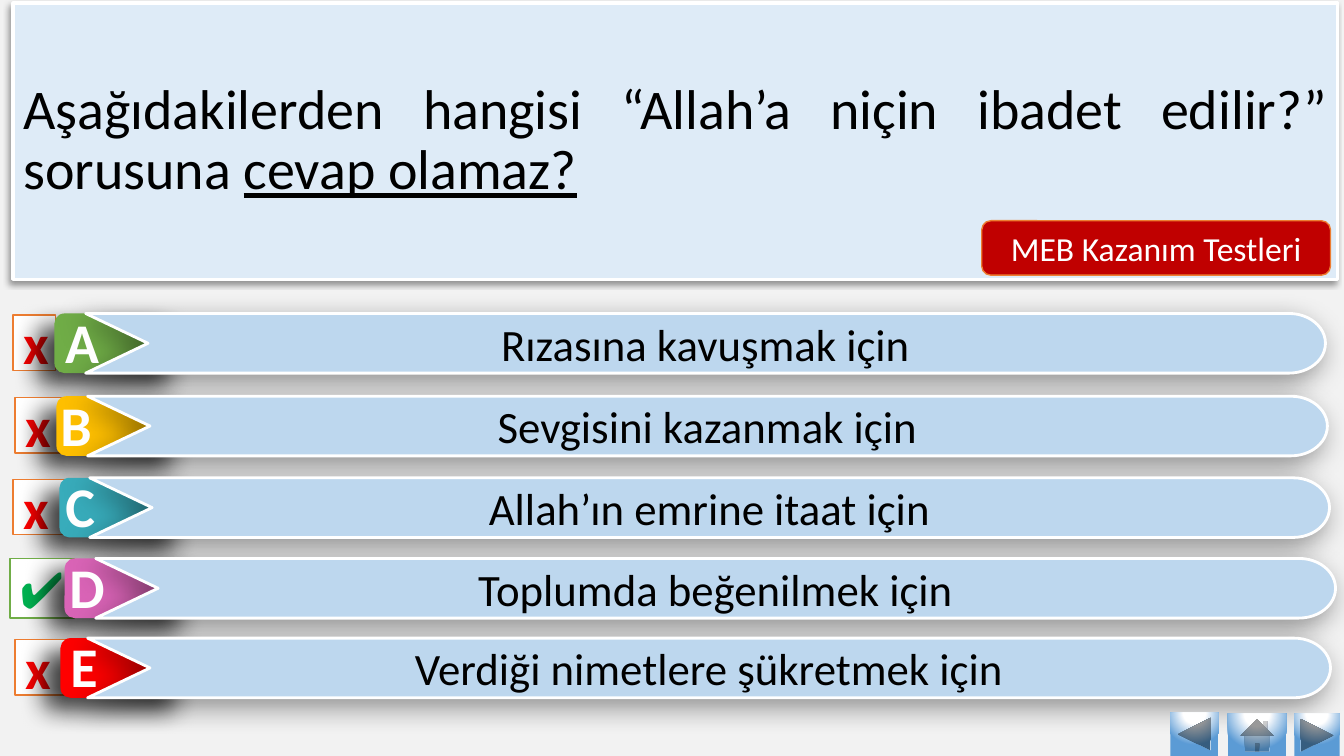
from math import cos, pi, sin

from lxml.etree import SubElement
from pptx import Presentation
from pptx.dml.color import RGBColor
from pptx.enum.shapes import MSO_SHAPE as Kind
from pptx.enum.text import MSO_ANCHOR as Anchor, MSO_AUTO_SIZE as Fit, PP_ALIGN as Align
from pptx.oxml import parse_xml
from pptx.oxml.ns import nsdecls, qn
from pptx.util import Pt

hue = RGBColor.from_string


def style(shape, fill, line=None, width=1, shade=None):
    """Set fill, line and shadow; shade is (opacity %, blur, distance, degrees)."""
    shape.fill.solid()
    shape.fill.fore_color.rgb = hue(fill)
    if line:
        shape.line.color.rgb = hue(line)
        shape.line.width = Pt(width)
    else:
        shape.line.fill.background()
    shape.shadow.inherit = False
    if shade:
        alpha, blur, dist, angle = shade
        effects = shape._element.spPr.find(qn("a:effectLst"))
        outer = SubElement(effects, qn("a:outerShdw"), blurRad=str(Pt(blur)),
                           dist=str(Pt(dist)), dir=str(angle * 60000), rotWithShape="0")
        black = SubElement(outer, qn("a:srgbClr"), val="000000")
        SubElement(black, qn("a:alpha"), val=str(alpha * 1000))


def write(shape, text, size, color, align=Align.CENTER, bold=False):
    frame = shape.text_frame
    frame.word_wrap = True
    frame.vertical_anchor = Anchor.MIDDLE
    para = frame.paragraphs[0]
    para.alignment = align
    run = para.add_run()
    run.text = text
    font = para.font
    font.name, font.size, font.bold = "Calibri", Pt(size), bold
    font.color.rgb = hue(color)
    return para


deck = Presentation()
deck.slide_width, deck.slide_height = Pt(960), Pt(540)
slide = deck.slides.add_slide(deck.slide_layouts[5])
slide.background.fill.solid()
slide.background.fill.fore_color.rgb = hue("F2F2F2")
shapes = slide.shapes

# Question
title = shapes.title
title.left, title.top, title.width, title.height = Pt(9.4), Pt(2.2), Pt(946), Pt(197.3)
style(title, "DEEBF7", "FFFFFF", 2.5, (40, 4, 3, 135))
title.text_frame.auto_size = Fit.NONE
para = write(title, "Aşağıdakilerden hangisi “Allah’a niçin ibadet edilir?” sorusuna ",
             40, "000000", Align.JUSTIFY)
para.line_spacing = 0.9
para.space_before = Pt(0)
stress = para.add_run()
stress.text = "cevap olamaz?"
stress.font.underline = True

# Answers: letter, tint, text, top, mark left and width, tab left,
# bar left and width, letter left and width
rows = [
    ("A", "70AD47", "Rızasına kavuşmak için", 223.9, 9.4, 30.2, 38.9, 61.2, 885.6, 30.2, 56.9),
    ("B", "FFC000", "Sevgisini kazanmak için", 283, 10.8, 39.6, 40.3, 62.6, 885.6, 25.9, 56.9),
    ("C", "38ACBB", "Allah’ın emrine itaat için", 341.3, 9.4, 39.6, 42.5, 64.1, 885.6, 32.4, 49.7),
    ("D", "DA64B7", "Toplumda beğenilmek için", 398.9, 7.2, 46.1, 46.1, 68.4, 885.6, 33.8, 56.9),
    ("E", "FF0000", "Verdiği nimetlere şükretmek için", 455.8, 10.8, 39.6, 43.2, 62.6, 887.8, 33.8, 52.6),
]
tall = 42.6
half = tall / 2
bend, notch = 26, 44.6
for letter, tint, text, top, mark_x, mark_w, tab_x, bar_x, bar_w, let_x, let_w in rows:
    right = letter == "D"
    inset = 0 if right else 1
    mark = shapes.add_shape(Kind.RECTANGLE, Pt(mark_x), Pt(top + inset),
                            Pt(mark_w), Pt(tall - 3 * inset))
    style(mark, "FFFFFF", "70AD47" if right else "ED7D31")
    if right:
        write(mark, "✔", 36, "00B050", Align.LEFT)
    else:
        write(mark, "x", 40, "FF0000", Align.LEFT, True)

    tab = shapes.add_shape(Kind.ROUNDED_RECTANGLE, Pt(tab_x), Pt(top), Pt(94.3), Pt(tall))
    style(tab, tint, shade=(75, 18, 15, 143))

    mid = top + half
    turn = bar_x + bar_w - bend
    arc = [(turn + bend * cos(a), mid + half * sin(a))
           for a in (pi * step / 24 - pi / 2 for step in range(25))]
    points = arc + [(bar_x, top + tall), (bar_x + notch, mid)]
    path = shapes.build_freeform(Pt(bar_x), Pt(top))
    path.add_line_segments([(Pt(x), Pt(y)) for x, y in points])
    bar = path.convert_to_shape()
    style(bar, "BDD7EE", "FFFFFF", 2, (40, 20, 7, 135))
    write(bar, text, 32, "000000")

    label = shapes.add_textbox(Pt(let_x), Pt(top - 7.9), Pt(let_w), Pt(55.4))
    para = write(label, letter, 40, "FEFEFE", bold=True)
    label.text_frame.vertical_anchor = Anchor.TOP
    props = para.runs[0]._r.get_or_add_rPr()
    props.set("spc", "50")
    edge = SubElement(props, qn("a:ln"), w=str(Pt(0.75)))
    solid = SubElement(edge, qn("a:solidFill"))
    SubElement(solid, qn("a:srgbClr"), val="FFFFFF")

# Source badge
badge = shapes.add_shape(Kind.ROUNDED_RECTANGLE, Pt(701.3), Pt(157.7), Pt(249.1), Pt(38.9))
style(badge, "C00000", "ED7D31")
write(badge, "MEB Kazanım Testleri", 24, "FFFFFF")

# Navigation buttons
glow = f"""<a:gradFill {nsdecls("a")} rotWithShape="1"><a:gsLst>
<a:gs pos="0"><a:srgbClr val="FFFFFF"/></a:gs>
<a:gs pos="35000"><a:srgbClr val="FFFFFF"/></a:gs>
<a:gs pos="100000"><a:srgbClr val="5B9BD5"/></a:gs></a:gsLst>
<a:path path="circle"><a:fillToRect l="50000" t="-80000" r="50000" b="180000"/></a:path>
</a:gradFill>"""
for kind, left, top, width in (
    (Kind.ACTION_BUTTON_BACK_OR_PREVIOUS, 835.9, 509, 34.6),
    (Kind.ACTION_BUTTON_FORWARD_OR_NEXT, 924.5, 509.8, 32.4),
    (Kind.ACTION_BUTTON_HOME, 877, 509.8, 41.8),
):
    button = shapes.add_shape(kind, Pt(left), Pt(top), Pt(width), Pt(31))
    style(button, "5B9BD5")
    props = button._element.spPr
    props.replace(props.find(qn("a:solidFill")), parse_xml(glow))

deck.save("out.pptx")
